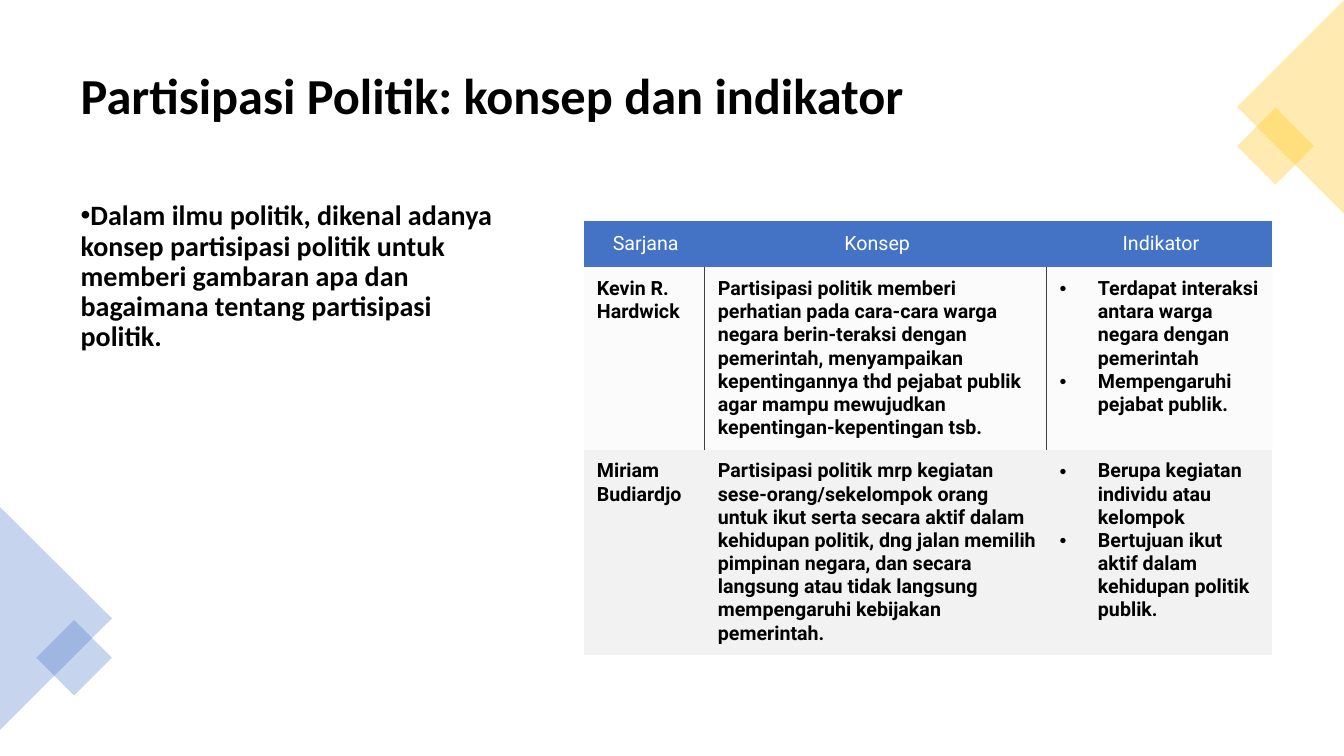
from dataclasses import dataclass

from lxml.etree import SubElement
from pptx import Presentation
from pptx.dml.color import RGBColor
from pptx.enum.shapes import MSO_SHAPE
from pptx.enum.text import MSO_ANCHOR, MSO_AUTO_SIZE, PP_ALIGN
from pptx.oxml.ns import qn
from pptx.util import Inches, Pt


@dataclass(frozen=True)
class Theme:
    blue: str = "4472C4"
    yellow: str = "FFC000"
    gray: str = "F2F2F2"
    rule: str = "404040"
    ink: str = "000000"
    white: str = "FFFFFF"
    heading_font: str = "Calibri"
    table_font: str = "Roboto"
    title_size: int = 36
    body_size: int = 20
    table_size: int = 14


THEME = Theme()
NO_GRID_STYLE = "{2D5ABB26-0587-4C30-8999-92F81FD0307C}"
COLUMN_WIDTHS = (1.2, 3.39, 2.24)
ROW_HEIGHTS = (0.46, 1.81, 2.03)
ROW_OPACITIES = (30, 100)
RULED_SIDES = (("a:lnR",), ("a:lnL", "a:lnR"), ("a:lnL",))
HEADINGS = ("Sarjana", "Konsep", "Indikator")
SCHOLARS = (
    (
        ("Kevin R. Hardwick",),
        ("Partisipasi politik memberi perhatian pada cara-cara warga negara berin-teraksi "
         "dengan pemerintah, menyampaikan kepentingannya thd pejabat publik agar mampu "
         "mewujudkan kepentingan-kepentingan tsb.",),
        ("Terdapat interaksi antara warga negara dengan pemerintah",
         "Mempengaruhi pejabat publik."),
    ),
    (
        ("Miriam Budiardjo",),
        ("Partisipasi politik mrp kegiatan sese-orang/sekelompok orang untuk ikut serta "
         "secara aktif dalam kehidupan politik, dng jalan memilih pimpinan negara, dan "
         "secara langsung atau tidak langsung mempengaruhi kebijakan pemerintah.",),
        ("Berupa kegiatan individu atau kelompok",
         "Bertujuan ikut aktif dalam kehidupan politik publik."),
    ),
)


def write_text(frame, *lines, font, size, color=THEME.ink, bold=True, align=PP_ALIGN.LEFT,
               spacing=1.0, margin=0, indent=0, bullet=False):
    frame.word_wrap = True
    for index, line in enumerate(lines):
        paragraph = frame.paragraphs[0] if index == 0 else frame.add_paragraph()
        paragraph.alignment = align
        paragraph.line_spacing = spacing
        paragraph.space_before = Pt(0)
        properties = paragraph._p.get_or_add_pPr()
        properties.set("marL", str(Inches(margin)))
        properties.set("indent", str(Inches(indent)))
        if bullet:
            SubElement(properties, qn("a:buFont"), typeface="Arial")
            SubElement(properties, qn("a:buChar"), char="•")
        run = paragraph.add_run()
        run.text = line
        run.font.name = font
        run.font.size = Pt(size)
        run.font.bold = bold
        run.font.color.rgb = RGBColor.from_string(color)


def paint(fill, color, opacity=100):
    fill.solid()
    fill.fore_color.rgb = RGBColor.from_string(color)
    if opacity < 100:
        tint = fill._xPr.find(qn("a:solidFill")).find(qn("a:srgbClr"))
        SubElement(tint, qn("a:alpha"), val=str(opacity * 1000))


def fill_placeholder(placeholder, box, anchor, text, **text_format):
    placeholder.left, placeholder.top, placeholder.width, placeholder.height = map(Inches, box)
    frame = placeholder.text_frame
    frame.auto_size = MSO_AUTO_SIZE.NONE
    frame.vertical_anchor = anchor
    write_text(frame, text, font=THEME.heading_font, spacing=0.9, **text_format)


def add_corner_piece(slide, preset, box, rotation, color):
    piece = slide.shapes.add_shape(preset, *map(Inches, box))
    piece.rotation = rotation
    piece.shadow.inherit = False
    paint(piece.fill, color, 30)
    piece.line.fill.background()


def rule_side(cell, side):
    border = SubElement(cell._tc.get_or_add_tcPr(), qn(side), w=str(Pt(0.5)))
    fill = SubElement(border, qn("a:solidFill"))
    SubElement(fill, qn("a:srgbClr"), val=THEME.rule)


def fill_cell(cell, *lines, background, opacity=100, sides=(), anchor=MSO_ANCHOR.TOP,
              **text_format):
    cell.margin_left = Inches(0.13)
    cell.margin_right = cell.margin_top = cell.margin_bottom = Inches(0.1)
    cell.vertical_anchor = anchor
    for side in sides:
        rule_side(cell, side)
    paint(cell.fill, background, opacity)
    write_text(cell.text_frame, *lines, font=THEME.table_font, size=THEME.table_size,
               **text_format)


def add_scholar_table(slide):
    table = slide.shapes.add_table(
        len(ROW_HEIGHTS), len(COLUMN_WIDTHS), Inches(5.79), Inches(2.19),
        Inches(sum(COLUMN_WIDTHS)), Inches(sum(ROW_HEIGHTS))).table
    table.first_row = table.horz_banding = False
    table._tbl.tblPr.find(qn("a:tableStyleId")).text = NO_GRID_STYLE
    for column, width in zip(table.columns, COLUMN_WIDTHS):
        column.width = Inches(width)
    for row, height in zip(table.rows, ROW_HEIGHTS):
        row.height = Inches(height)

    hanging = {"margin": 0.38, "indent": -0.38}
    for column, heading in enumerate(HEADINGS):
        fill_cell(table.cell(0, column), heading, background=THEME.blue,
                  anchor=MSO_ANCHOR.MIDDLE, color=THEME.white, bold=False,
                  align=PP_ALIGN.CENTER, **hanging)
    for row, (scholar, opacity) in enumerate(zip(SCHOLARS, ROW_OPACITIES), start=1):
        for column, lines in enumerate(scholar):
            listing = {"bullet": True, **hanging} if HEADINGS[column] == "Indikator" else {}
            fill_cell(table.cell(row, column), *lines, background=THEME.gray, opacity=opacity,
                      sides=RULED_SIDES[column] if row == 1 else (), **listing)


def main():
    presentation = Presentation()
    presentation.slide_width, presentation.slide_height = Inches(13.33), Inches(7.5)
    slide = presentation.slides.add_slide(presentation.slide_layouts[1])
    title, body = slide.placeholders
    fill_placeholder(title, (0.7, 0.35, 11.93, 1.24), MSO_ANCHOR.MIDDLE,
                     "Partisipasi Politik: konsep dan indikator", size=THEME.title_size)
    fill_placeholder(body, (0.7, 1.95, 4.38, 4.81), MSO_ANCHOR.TOP,
                     "Dalam ilmu politik, dikenal adanya konsep partisipasi politik untuk "
                     "memberi gambaran apa dan bagaimana tentang partisipasi politik.",
                     size=THEME.body_size, indent=-0.25, bullet=True)
    triangle, square = MSO_SHAPE.ISOSCELES_TRIANGLE, MSO_SHAPE.RECTANGLE
    add_corner_piece(slide, triangle, (-0.55, 5.58, 2.21, 1.11), 90, THEME.blue)
    add_corner_piece(slide, square, (0.47, 6.26, 0.53, 0.53), 45, THEME.blue)
    add_corner_piece(slide, square, (12.38, 1.18, 0.54, 0.54), 45, THEME.yellow)
    add_corner_piece(slide, triangle, (11.74, 0.53, 2.12, 1.06), 270, THEME.yellow)
    add_scholar_table(slide)
    presentation.save("out.pptx")


if __name__ == "__main__":
    main()
